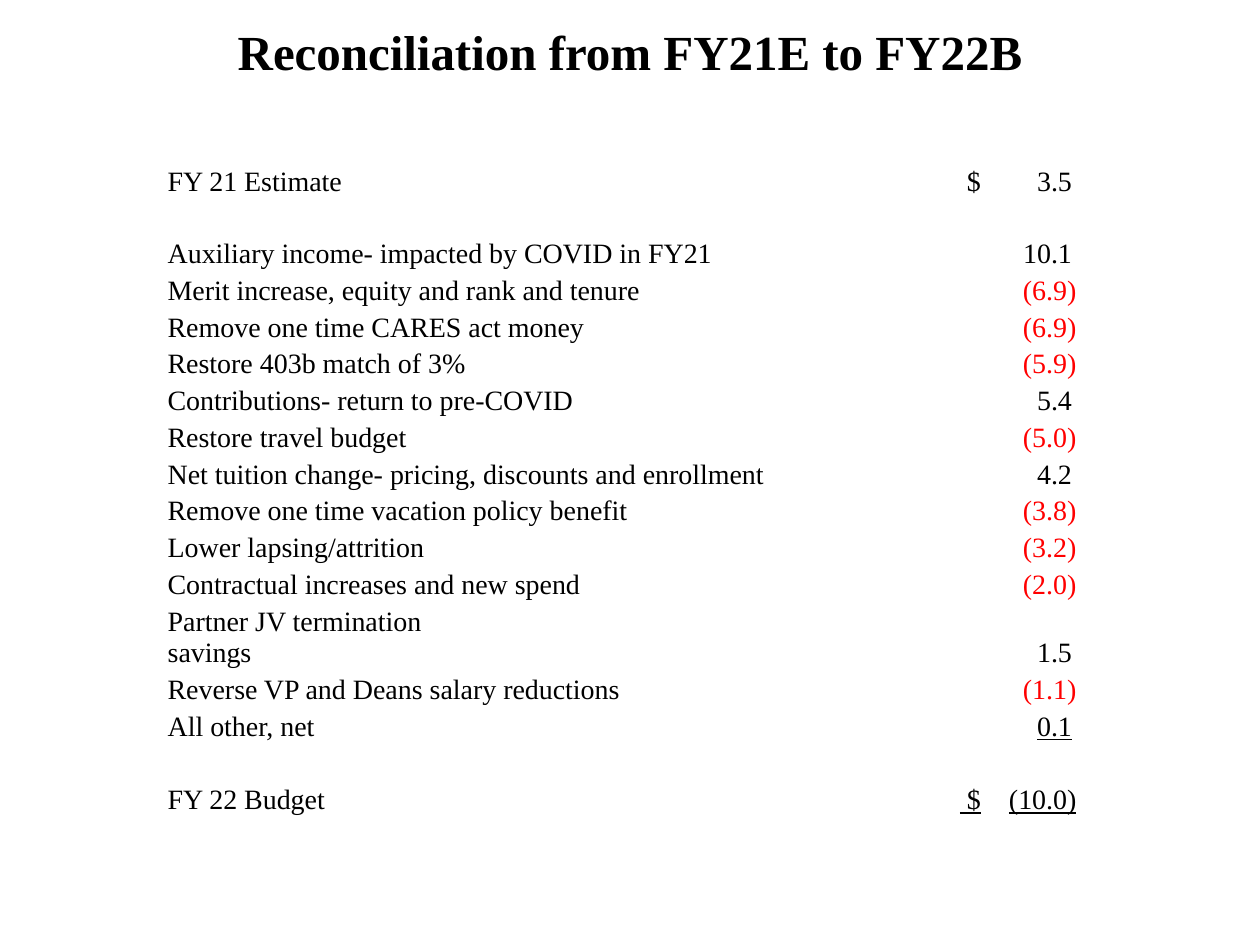
import lxml.etree
import pptx
import pptx.dml.color
import pptx.enum.text
import pptx.oxml.ns
import pptx.util

Cm = pptx.util.Cm
Pt = pptx.util.Pt
qn = pptx.oxml.ns.qn
MIDDLE = pptx.enum.text.MSO_ANCHOR.MIDDLE
BOTTOM = pptx.enum.text.MSO_ANCHOR.BOTTOM


def color(value):
    return pptx.dml.color.RGBColor.from_string(value)


def write(para, text, size=16, fill="000000", bold=False, underline=False):
    span = para.add_run()
    span.text = text
    span.font.name = "Times New Roman"
    span.font.size = Pt(size)
    span.font.bold = bold
    span.font.underline = underline
    span.font.color.rgb = color(fill)


deck = pptx.Presentation()
deck.slide_width = Cm(25.4)
deck.slide_height = Cm(19.05)
page = deck.slides.add_slide(deck.slide_layouts[6])

title = page.shapes.add_textbox(Cm(4.34), Cm(0.2), Cm(16.72), Cm(1.65)).text_frame
title.word_wrap = True
title.vertical_anchor = MIDDLE
title.paragraphs[0].alignment = pptx.enum.text.PP_ALIGN.CENTER
write(title.paragraphs[0], "Reconciliation from FY21E to FY22B", size=28, bold=True)

entries = [
    ("FY 21 Estimate", 3, " $", "3.5"),
    None,
    ("Auxiliary income- impacted by COVID in FY21", 7, "", "10.1"),
    ("Merit increase, equity and rank and tenure", 7, "", "(6.9)"),
    ("Remove one time CARES act money", 7, "", "(6.9)"),
    ("Restore 403b match of 3%", 5, "", "(5.9)"),
    ("Contributions- return to pre-COVID", 7, "", "5.4"),
    ("Restore travel budget", 4, "", "(5.0)"),
    ("Net tuition change- pricing, discounts and enrollment", 7, "", "4.2"),
    ("Remove one time vacation policy benefit", 7, "", "(3.8)"),
    ("Lower lapsing/attrition", 4, "", "(3.2)"),
    ("Contractual increases and new spend", 7, "", "(2.0)"),
    ("Partner JV termination savings", 5, "", "1.5"),
    ("Reverse VP and Deans salary reductions", 7, "", "(1.1)"),
    ("All other, net", 3, "", "0.1"),
    None,
    ("FY 22 Budget", 3, " $", "(10.0)"),
]
widths = [1.45] + [1.35] * 5 + [7.77, 2.72]
heights = [0.74, 0.71] + [0.74] * 15

table = page.shapes.add_table(
    len(entries), len(widths), Cm(3.35), Cm(3.25), Cm(sum(widths)), Cm(sum(heights))
).table
table.first_row = False
table.horz_banding = False
style = table._tbl.tblPr.find(qn("a:tableStyleId"))
style.text = "{2D5ABB26-0587-4C30-8999-92F81FD0307C}"
for column, width in zip(table.columns, widths):
    column.width = Cm(width)
for row, height in zip(table.rows, heights):
    row.height = Cm(height)
for cell in table.iter_cells():
    cell.fill.background()
    cell.vertical_anchor = BOTTOM
    cell.margin_left = cell.margin_right = cell.margin_top = Cm(0.03)
    cell.margin_bottom = 0
    lxml.etree.SubElement(cell.text_frame.paragraphs[0]._p, qn("a:endParaRPr"), sz="1600")

for index, entry in enumerate(entries):
    if entry is None:
        continue
    label, reach, currency, amount = entry
    label_cell = table.cell(index, 0)
    label_cell.merge(table.cell(index, reach - 1))
    write(label_cell.text_frame.paragraphs[0], label)

    para = table.cell(index, 7).text_frame.paragraphs[0]
    negative = amount.startswith("(")
    tabs = lxml.etree.SubElement(para._p.get_or_add_pPr(), qn("a:tabLst"))
    stop = Cm(2.35 if negative else 2.26)
    lxml.etree.SubElement(tabs, qn("a:tab"), pos=str(stop), algn="r")
    underline = label in ("All other, net", "FY 22 Budget")
    red = negative and not underline
    write(para, f"{currency}\t{amount}", fill="FF0000" if red else "000000", underline=underline)

deck.save("out.pptx")
